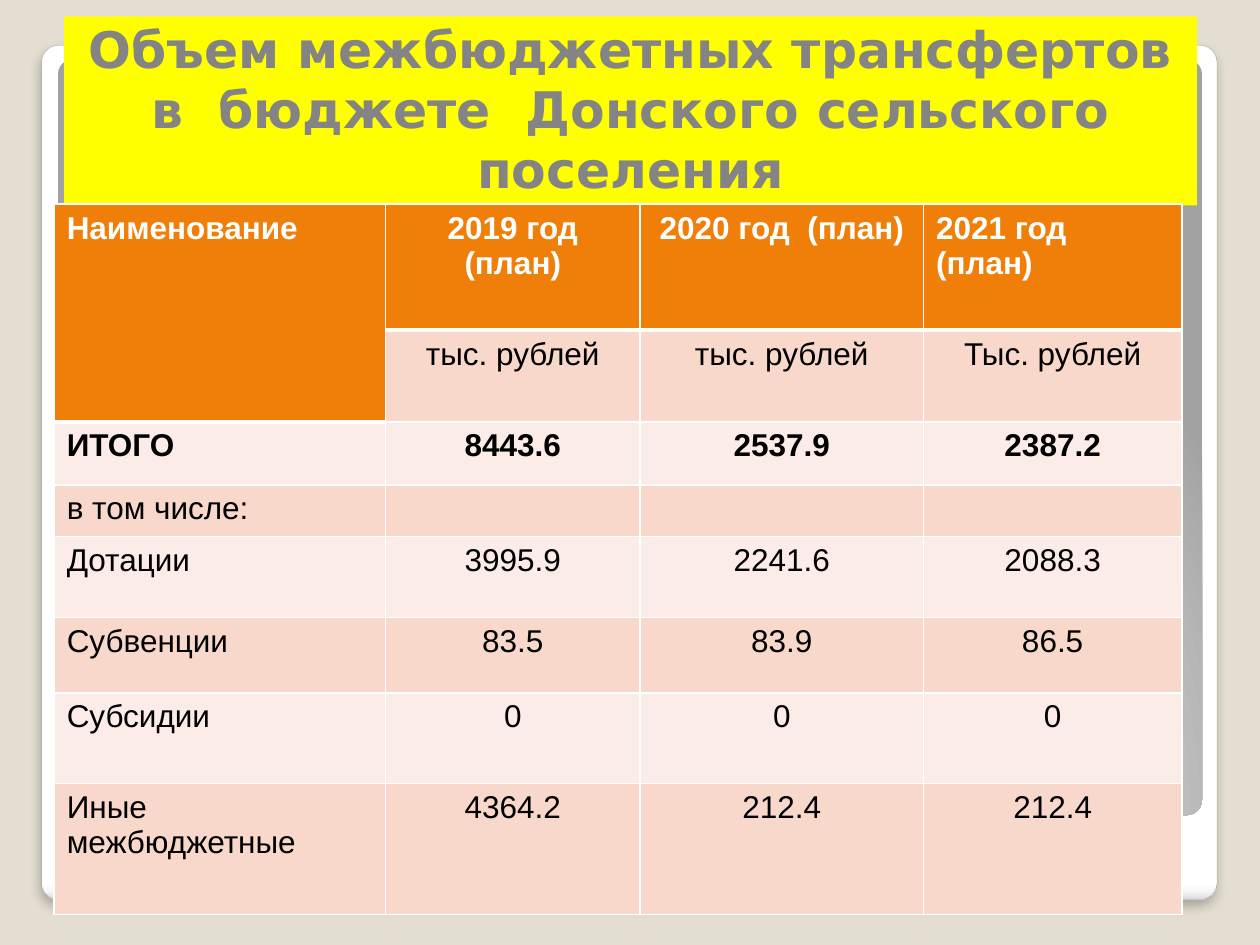
from lxml import etree
from pptx import Presentation
from pptx.dml.color import RGBColor
from pptx.enum.shapes import MSO_SHAPE
from pptx.enum.text import MSO_ANCHOR, MSO_AUTO_SIZE, PP_ALIGN
from pptx.oxml import parse_xml
from pptx.oxml.ns import qn
from pptx.util import Inches, Pt

ROUNDED = MSO_SHAPE.ROUNDED_RECTANGLE
BOTTOM = MSO_ANCHOR.BOTTOM
NO_AUTOFIT = MSO_AUTO_SIZE.NONE
CENTER, LEFT = PP_ALIGN.CENTER, PP_ALIGN.LEFT
DRAWING = 'xmlns:a="http://schemas.openxmlformats.org/drawingml/2006/main"'

COLORS = {
    "background": "E3DED1", "panel_line": "A4A4A4", "shadow": "000000",
    "title_fill": "FFFF00", "title_text": "848484",
    "header": "F07F09", "header_text": "FFFFFF", "body_text": "000000",
    "odd_band": "F9D8CC", "even_band": "FCECE7", "border": "FFFFFF",
}
TITLE = "Объем межбюджетных трансфертов в  бюджете  Донского сельского поселения"
ROWS = [
    ("Наименование", "2019 год (план)", "2020 год  (план)", "2021 год (план)"),
    ("", "тыс. рублей", "тыс. рублей", "Тыс. рублей"),
    ("ИТОГО", "8443.6", "2537.9", "2387.2"),
    ("в том числе:", "", "", ""),
    ("Дотации", "3995.9", "2241.6", "2088.3"),
    ("Субвенции", "83.5", "83.9", "86.5"),
    ("Субсидии", "0", "0", "0"),
    ("Иные межбюджетные", "4364.2", "212.4", "212.4"),
]
COLUMN_WIDTHS = [2.63, 2.02, 2.25, 2.05]
ROW_HEIGHTS = [1, 0.73, 0.5, 0.41, 0.64, 0.6, 0.72, 1.04]
BOLD_ROWS = (0, 2)
OUTER_STOPS = [(0, "FFFFFF"), (98, "FFFFFF"), (99, "F7F7F7"), (100, "DADADA")]
INNER_STOPS = [(0, "FFFFFF"), (55, "E1E1E1"), (100, "A2A2A2")]
LINEAR = '<a:lin ang="5400000" scaled="0"/>'
RADIAL = ('<a:path path="circle"><a:fillToRect l="50000" t="175000" '
          'r="50000" b="-75000"/></a:path>')


def color(name):
    return RGBColor.from_string(COLORS[name])


def style_paragraph(para, font, size, shade, bold, align):
    para.alignment = align
    for span in para.runs:
        span.font.name = font
        span.font.size = Pt(size)
        span.font.bold = bold
        span.font.color.rgb = color(shade)


def add_panel(slide, area, stops, direction):
    panel = slide.shapes.add_shape(ROUNDED, *map(Inches, area))
    panel.adjustments[0] = 0.02
    panel.shadow.inherit = False
    panel.line.fill.background()
    stop_xml = "".join(
        f'<a:gs pos="{place * 1000}"><a:srgbClr val="{shade}"/></a:gs>'
        for place, shade in stops)
    gradient = parse_xml(f'<a:gradFill {DRAWING} rotWithShape="1"><a:gsLst>{stop_xml}'
                         f'</a:gsLst>{direction}</a:gradFill>')
    panel._element.spPr.find(qn("a:prstGeom")).addnext(gradient)
    return panel


def add_shadow(panel):
    effects = panel._element.spPr.find(qn("a:effectLst"))
    shadow = etree.SubElement(effects, qn("a:outerShdw"), blurRad=str(Pt(6)),
                              dist=str(Pt(4)), dir="5400000", algn="t", rotWithShape="0")
    shade = etree.SubElement(shadow, qn("a:srgbClr"), val=COLORS["shadow"])
    etree.SubElement(shade, qn("a:alpha"), val="25000")


def set_borders(cell, bottom_width):
    properties = cell._tc.get_or_add_tcPr()
    widths = {"lnL": 1, "lnR": 1, "lnT": 1, "lnB": bottom_width}
    for position, (side, width) in enumerate(widths.items()):
        properties.insert(position, parse_xml(
            f'<a:{side} {DRAWING} w="{Pt(width)}"><a:solidFill>'
            f'<a:srgbClr val="{COLORS["border"]}"/></a:solidFill></a:{side}>'))


def add_title(slide):
    title = slide.shapes.title
    title.left, title.top = Inches(0.51), Inches(0.13)
    title.width, title.height = Inches(8.99), Inches(1.5)
    title.fill.solid()
    title.fill.fore_color.rgb = color("title_fill")
    frame = title.text_frame
    frame.text = TITLE
    frame.word_wrap = True
    frame.auto_size = NO_AUTOFIT
    frame.vertical_anchor = BOTTOM
    style_paragraph(frame.paragraphs[0], "DejaVu Sans", 28.8, "title_text", True, CENTER)
    slide.shapes._spTree.append(title._element)


def add_budget_table(slide):
    table = slide.shapes.add_table(
        len(ROWS), len(COLUMN_WIDTHS), Inches(0.43), Inches(1.62),
        Inches(sum(COLUMN_WIDTHS)), Inches(sum(ROW_HEIGHTS))).table
    for column, width in zip(table.columns, COLUMN_WIDTHS):
        column.width = Inches(width)
    for row, height in zip(table.rows, ROW_HEIGHTS):
        row.height = Inches(height)
    for r, values in enumerate(ROWS):
        for c, value in enumerate(values):
            cell = table.cell(r, c)
            header = r == 0 or (r == 1 and c == 0)
            band = "odd_band" if r % 2 else "even_band"
            cell.text = value
            cell.fill.solid()
            cell.fill.fore_color.rgb = color("header" if header else band)
            set_borders(cell, 3 if header else 1)
            align = LEFT if c == 0 or (r == 0 and c == 3) else CENTER
            style_paragraph(cell.text_frame.paragraphs[0], "Arial", 18,
                            "header_text" if header else "body_text",
                            r in BOLD_ROWS, align)
    table.cell(0, 0).merge(table.cell(1, 0))


def main():
    deck = Presentation()
    deck.slide_width, deck.slide_height = Inches(10), Inches(7.5)
    slide = deck.slides.add_slide(deck.slide_layouts[5])
    slide.background.fill.solid()
    slide.background.fill.fore_color.rgb = color("background")
    outer = add_panel(slide, (0.33, 0.36, 9.33, 6.78), OUTER_STOPS, LINEAR)
    outer.line.color.rgb = color("panel_line")
    outer.line.width = Pt(0.16)
    add_shadow(outer)
    add_panel(slide, (0.46, 0.47, 9.08, 6), INNER_STOPS, RADIAL)
    add_title(slide)
    add_budget_table(slide)
    deck.save("out.pptx")


if __name__ == "__main__":
    main()
